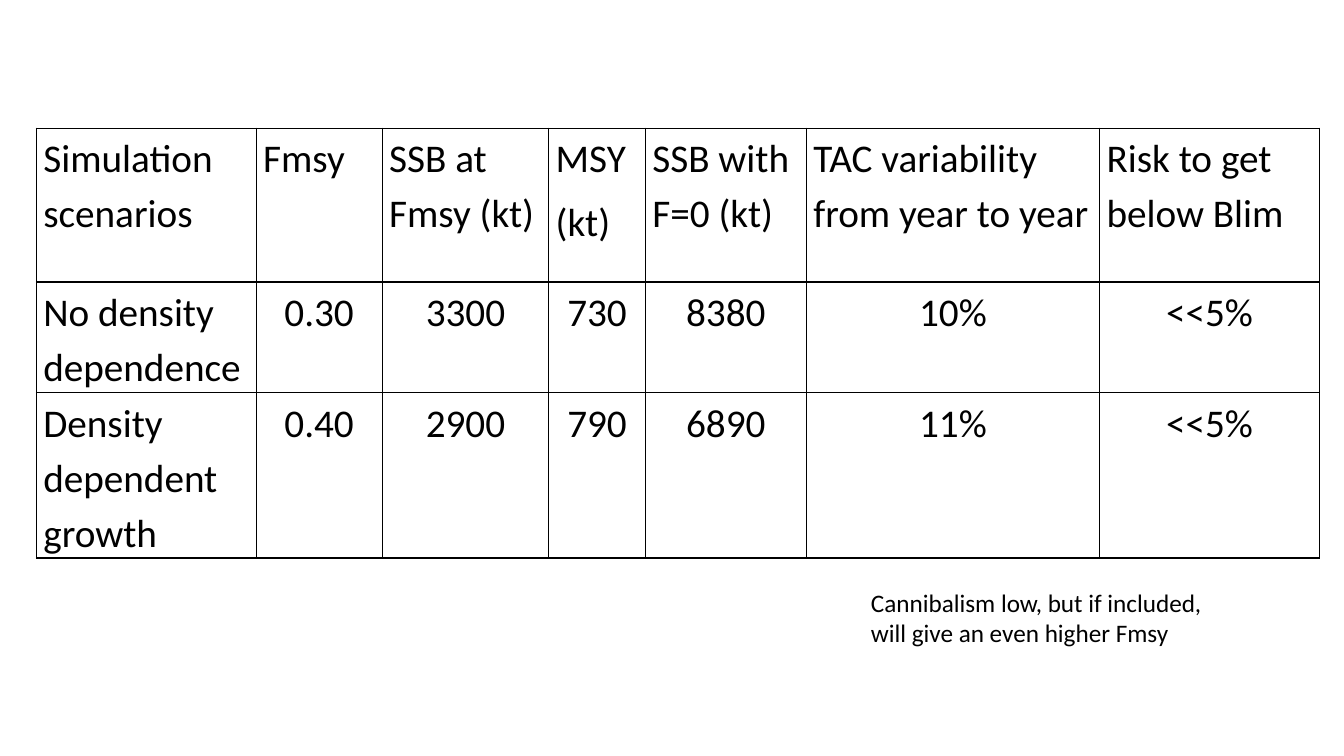
from lxml import etree
from pptx import Presentation
from pptx.dml.color import RGBColor
from pptx.enum.text import PP_ALIGN
from pptx.oxml.ns import qn
from pptx.util import Pt

LEFT, CENTER = PP_ALIGN.LEFT, PP_ALIGN.CENTER

# Content: each line break in a cell starts a new paragraph
ROWS = [
    ["Simulation scenarios", "Fmsy", "SSB at Fmsy (kt)", "MSY\n(kt)",
     "SSB with F=0 (kt)", "TAC variability from year to year",
     "Risk to get below Blim"],
    ["No density dependence", "0.30", "3300", "730", "8380", "10%", "<<5%"],
    ["Density dependent growth", "0.40", "2900", "790", "6890", "11%", "<<5%"],
]
NOTE = "Cannibalism low, but if included, will give an even higher Fmsy"

# Layout in points
SLIDE = (960, 540)
GRID = (26, 91.5)
WIDTHS = [157, 90, 119, 69, 115, 209.5, 157]
HEIGHTS = [110, 79, 118]
BOX = (615, 416, 268, 51)

THEME = {"font": "Calibri", "ink": "000000", "cell": 28, "note": 18,
         "rule": 1, "inset": 5, "line": 1.15, "after": 6}


def add_run(para, text, size):
    run = para.add_run()
    run.text = text
    run.font.name = THEME["font"]
    run.font.size = Pt(size)
    run.font.color.rgb = RGBColor.from_string(THEME["ink"])


def add_edges(cell):
    props = cell._tc.get_or_add_tcPr()
    for i, side in enumerate(("lnL", "lnR", "lnT", "lnB")):
        edge = etree.Element(qn("a:" + side), w=str(Pt(THEME["rule"])))
        fill = etree.SubElement(edge, qn("a:solidFill"))
        etree.SubElement(fill, qn("a:srgbClr"), val=THEME["ink"])
        props.insert(i, edge)


def fill_cell(cell, text, align):
    cell.fill.background()
    cell.margin_left = cell.margin_right = Pt(THEME["inset"])
    cell.margin_top = cell.margin_bottom = 0
    frame = cell.text_frame
    for i, line in enumerate(text.split("\n")):
        para = frame.add_paragraph() if i else frame.paragraphs[0]
        para.alignment = align
        para.line_spacing = THEME["line"]
        para.space_after = Pt(THEME["after"])
        add_run(para, line, THEME["cell"])
    add_edges(cell)


def main():
    deck = Presentation()
    deck.slide_width, deck.slide_height = map(Pt, SLIDE)
    slide = deck.slides.add_slide(deck.slide_layouts[6])

    # Table of scenarios
    size = (sum(WIDTHS), sum(HEIGHTS))
    table = slide.shapes.add_table(
        len(ROWS), len(WIDTHS), *map(Pt, GRID + size)).table
    table.first_row = table.horz_banding = False
    for col, width in zip(table.columns, WIDTHS):
        col.width = Pt(width)
    for row, height in zip(table.rows, HEIGHTS):
        row.height = Pt(height)
    for r, row in enumerate(ROWS):
        for c, text in enumerate(row):
            fill_cell(table.cell(r, c), text, CENTER if r and c else LEFT)

    # Note below the table
    frame = slide.shapes.add_textbox(*map(Pt, BOX)).text_frame
    frame.word_wrap = True
    add_run(frame.paragraphs[0], NOTE, THEME["note"])

    deck.save("out.pptx")


if __name__ == "__main__":
    main()
